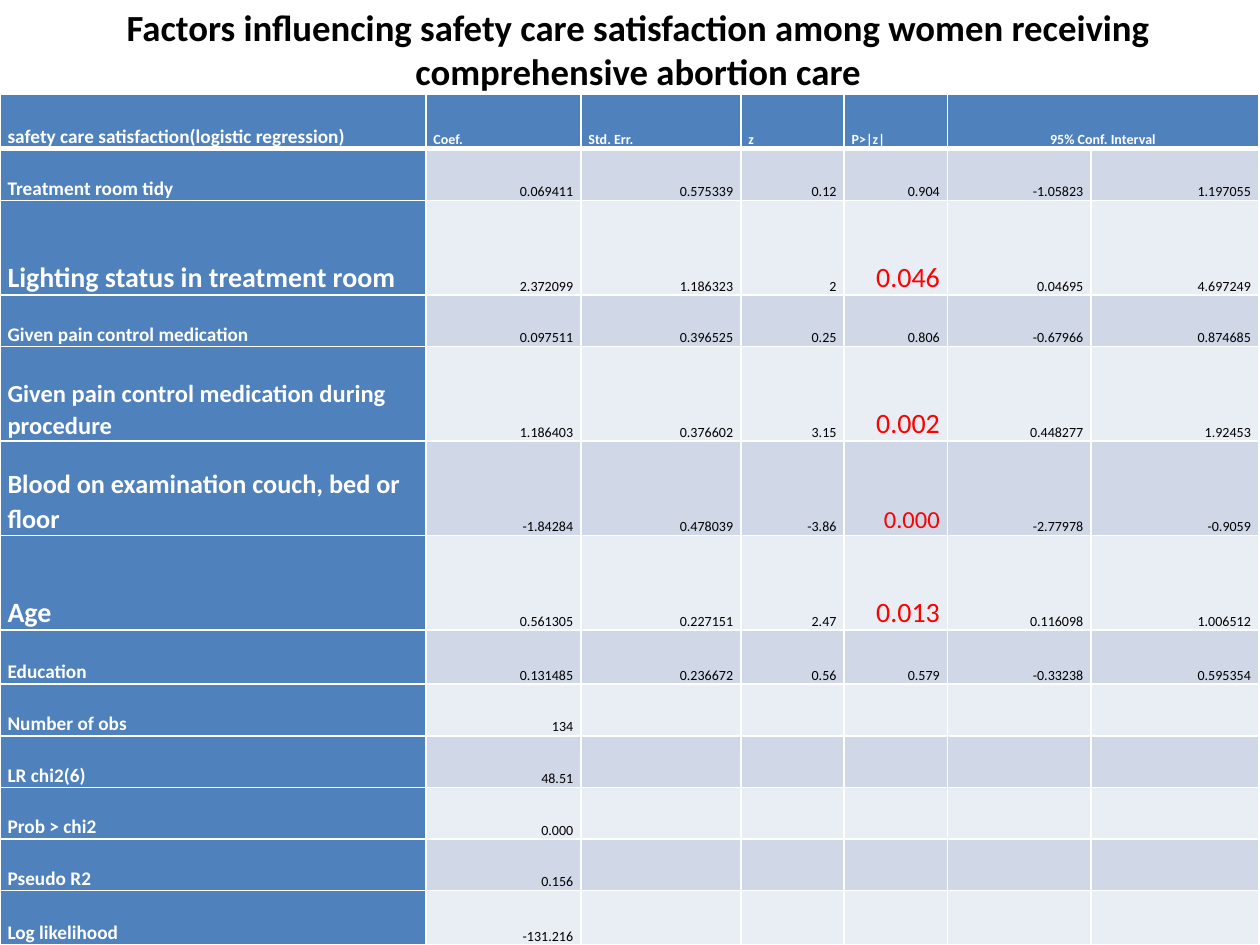
"""Build a slide with a logistic regression table on safety care satisfaction."""
from dataclasses import dataclass

import lxml.etree
import pptx
import pptx.dml.color
import pptx.enum.text
import pptx.oxml.ns
import pptx.table
import pptx.text.text
import pptx.util

Inches = pptx.util.Inches
Align = pptx.enum.text.PP_ALIGN
Anchor = pptx.enum.text.MSO_ANCHOR

FONT = "Calibri"
WHITE, BLACK, RED = "FFFFFF", "000000", "FF0000"
BLUE, BANDS = "4F81BD", ("D0D8E8", "E9EDF4")
SMALL, NORMAL = 8, 11
SHORT, MEDIUM, TALL = 0.41, 0.43, 0.75
COLUMN_WIDTHS = (3.38, 1.23, 1.27, 0.82, 0.82, 1.14, 1.33)
P_VALUE_COLUMN = 4
HEADINGS = ("safety care satisfaction(logistic regression)", "Coef.", "Std. Err.",
            "z", "P>|z|", "95% Conf. Interval")


@dataclass
class Factor:
    label: str
    values: tuple[str, ...]
    height: float = SHORT
    label_size: int = NORMAL
    p_size: int = SMALL
    p_color: str = BLACK


@dataclass
class Style:
    size: int
    color: str
    bold: bool = False
    align: Align = Align.LEFT


FACTORS = (
    Factor("Treatment room tidy",
           ("0.069411", "0.575339", "0.12", "0.904", "-1.05823", "1.197055")),
    Factor("Lighting status in treatment room",
           ("2.372099", "1.186323", "2", "0.046", "0.04695", "4.697249"), TALL, 16, 16, RED),
    Factor("Given pain control medication",
           ("0.097511", "0.396525", "0.25", "0.806", "-0.67966", "0.874685")),
    Factor("Given pain control medication during procedure",
           ("1.186403", "0.376602", "3.15", "0.002", "0.448277", "1.92453"), TALL, 14, 16, RED),
    Factor("Blood on examination couch, bed or floor",
           ("-1.84284", "0.478039", "-3.86", "0.000", "-2.77978", "-0.9059"), TALL, 15, 14, RED),
    Factor("Age",
           ("0.561305", "0.227151", "2.47", "0.013", "0.116098", "1.006512"), TALL, 16, 16, RED),
    Factor("Education",
           ("0.131485", "0.236672", "0.56", "0.579", "-0.33238", "0.595354"), MEDIUM),
    Factor("Number of obs", ("134",)),
    Factor("LR chi2(6)", ("48.51",)),
    Factor("Prob > chi2", ("0.000",)),
    Factor("Pseudo R2", ("0.156",)),
    Factor("Log likelihood", ("-131.216",), MEDIUM),
)


def rgb(color: str) -> pptx.dml.color.RGBColor:
    return pptx.dml.color.RGBColor.from_string(color)


def add_text(paragraph: pptx.text.text._Paragraph, text: str, style: Style) -> None:
    paragraph.alignment = style.align
    run = paragraph.add_run()
    run.text = text
    run.font.name = FONT
    run.font.size = pptx.util.Pt(style.size)
    run.font.bold = style.bold
    run.font.color.rgb = rgb(style.color)


def add_border(cell: pptx.table._Cell, side: str, points: float) -> None:
    qn = pptx.oxml.ns.qn
    properties = cell._tc.get_or_add_tcPr()
    line = lxml.etree.SubElement(properties, qn(f"a:ln{side}"), w=str(pptx.util.Pt(points)))
    fill = lxml.etree.SubElement(line, qn("a:solidFill"))
    lxml.etree.SubElement(fill, qn("a:srgbClr"), val=WHITE)


def format_cell(cell: pptx.table._Cell, row: int, fill: str) -> None:
    add_border(cell, "L", 1)
    add_border(cell, "R", 1)
    add_border(cell, "T", 3 if row == 1 else 1)
    add_border(cell, "B", 3 if row == 0 else 1)
    cell.fill.solid()
    cell.fill.fore_color.rgb = rgb(fill)
    cell.margin_left = cell.margin_right = Inches(0.06)
    cell.margin_top = cell.margin_bottom = 0
    cell.vertical_anchor = Anchor.BOTTOM
    paragraph = cell.text_frame.paragraphs[0]
    paragraph.line_spacing = 1.07
    paragraph.font.size = pptx.util.Pt(SMALL)


def fill_header(table: pptx.table.Table) -> None:
    last = len(HEADINGS) - 1
    table.cell(0, last).merge(table.cell(0, last + 1))
    for column, heading in enumerate(HEADINGS):
        style = Style(SMALL if column else NORMAL, WHITE, True,
                      Align.CENTER if column == last else Align.LEFT)
        add_text(table.cell(0, column).text_frame.paragraphs[0], heading, style)


def fill_factor(table: pptx.table.Table, row: int, factor: Factor) -> None:
    label = table.cell(row, 0).text_frame.paragraphs[0]
    add_text(label, factor.label, Style(factor.label_size, WHITE, True))
    for column, value in enumerate(factor.values, start=1):
        style = Style(SMALL, BLACK, align=Align.RIGHT)
        if column == P_VALUE_COLUMN:
            style = Style(factor.p_size, factor.p_color, align=Align.RIGHT)
        add_text(table.cell(row, column).text_frame.paragraphs[0], value, style)


def main() -> None:
    presentation = pptx.Presentation()
    presentation.slide_width, presentation.slide_height = Inches(10), Inches(7.5)
    slide = presentation.slides.add_slide(presentation.slide_layouts[5])

    title = slide.shapes.title
    title.left, title.top = Inches(0.13), Inches(0.03)
    title.width, title.height = Inches(9.87), Inches(0.72)
    title.text_frame.vertical_anchor = Anchor.MIDDLE
    add_text(title.text_frame.paragraphs[0],
             "Factors influencing safety care satisfaction among women receiving "
             "comprehensive abortion care", Style(21, BLACK, True, Align.CENTER))

    heights = [MEDIUM] + [factor.height for factor in FACTORS]
    frame = slide.shapes.add_table(len(heights), len(COLUMN_WIDTHS), 0, Inches(0.75),
                                   Inches(sum(COLUMN_WIDTHS)), Inches(sum(heights)))
    table = frame.table
    table.horz_banding = False
    for column, width in enumerate(COLUMN_WIDTHS):
        table.columns[column].width = Inches(width)
    for row, height in enumerate(heights):
        table.rows[row].height = Inches(height)
        for column in range(len(COLUMN_WIDTHS)):
            heading = row == 0 or column == 0
            format_cell(table.cell(row, column), row, BLUE if heading else BANDS[(row - 1) % 2])

    fill_header(table)
    for row, factor in enumerate(FACTORS, start=1):
        fill_factor(table, row, factor)
    presentation.save("out.pptx")


if __name__ == "__main__":
    main()
